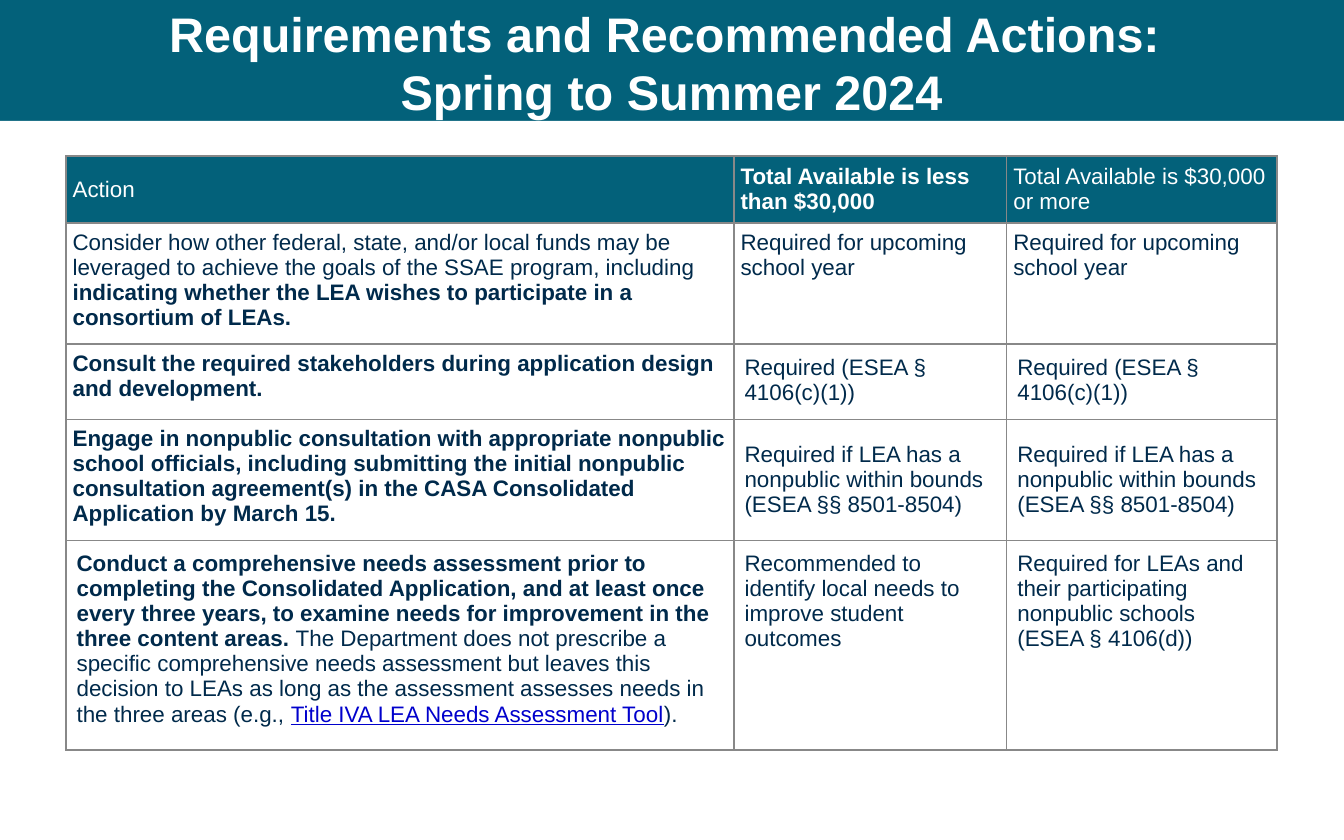
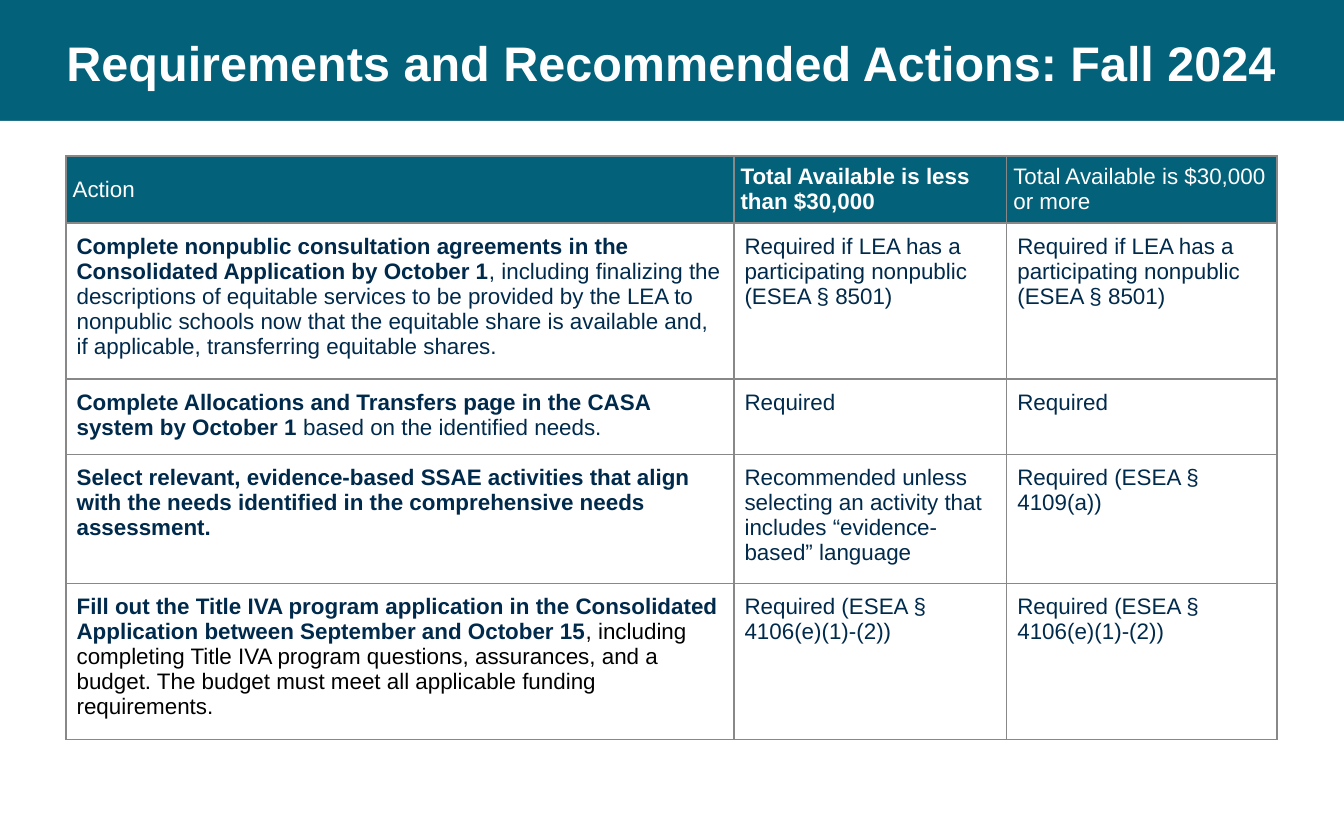
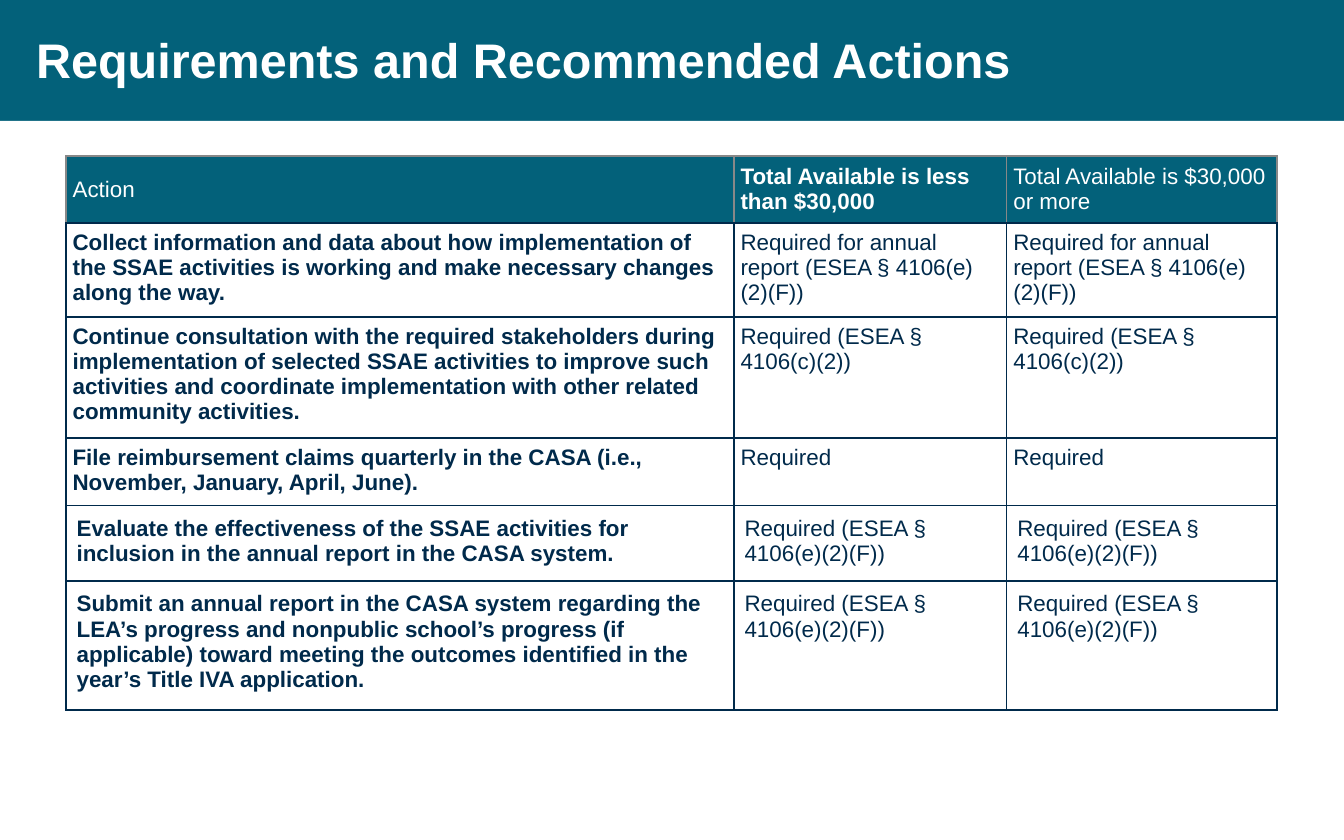
from dataclasses import dataclass

from lxml.etree import SubElement
from pptx import Presentation
from pptx.dml.color import RGBColor
from pptx.enum.shapes import MSO_SHAPE
from pptx.enum.text import MSO_ANCHOR, PP_ALIGN
from pptx.oxml.ns import qn
from pptx.util import Inches, Pt

TEAL = RGBColor(0x03, 0x61, 0x7A)
NAVY = RGBColor(0x00, 0x2A, 0x4B)
GRAY = RGBColor(0x88, 0x88, 0x88)
WHITE = RGBColor(0xFF, 0xFF, 0xFF)
BLACK = RGBColor(0x00, 0x00, 0x00)
LINK_BLUE = RGBColor(0x00, 0x00, 0xCC)

FONT = "Arial"
SLIDE_W, SLIDE_H = 10, 6.25
BAND_H = 0.9
TITLE_BOX = (0.17, 0.12, 9.66, 0.68)
TABLE_LEFT, TABLE_TOP, TABLE_W = 0.49, 1.16, 9.01
COLUMNS = (4.97, 2.03, 2.01)
NARROW, WIDE = 0.05, 0.08


@dataclass
class Text:
    """A stretch of text in one format."""
    text: str
    bold: bool = False
    color: RGBColor = NAVY
    underline: bool = False


@dataclass
class Action:
    """A table row: minimum height, action, status below and above the threshold."""
    min_height: float
    action: list
    below: str
    above: str = ""
    pad: float = WIDE
    action_pad: float = 0
    status_anchor: MSO_ANCHOR = MSO_ANCHOR.TOP


HEADER = [
    Text("Action", color=WHITE),
    Text("Total Available is less than $30,000", True, WHITE),
    Text("Total Available is $30,000 or more", color=WHITE),
]

SPRING_ACTIONS = [
    Action(0.15, [
        Text("Consider how other federal, state, and/or local funds may be leveraged to "
             "achieve the goals of the SSAE program, including "),
        Text("indicating whether the LEA wishes to participate in a consortium of LEAs.", True),
    ], "Required for upcoming school year", pad=NARROW),
    Action(0, [
        Text("Consult the required stakeholders during application design and development.", True),
    ], "Required (ESEA § 4106(c)(1))", action_pad=NARROW),
    Action(0, [
        Text("Engage in nonpublic consultation with appropriate nonpublic school officials, "
             "including submitting the initial nonpublic consultation agreement(s) in the "
             "CASA Consolidated Application by March 15.", True),
    ], "Required if LEA has a nonpublic within bounds (ESEA §§ 8501-8504)",
        action_pad=NARROW, status_anchor=MSO_ANCHOR.MIDDLE),
    Action(0.26, [
        Text("Conduct a comprehensive needs assessment prior to completing the Consolidated "
             "Application, and at least once every three years, to examine needs for "
             "improvement in the three content areas. ", True),
        Text("The Department does not prescribe a specific comprehensive needs assessment but "
             "leaves this decision to LEAs as long as the assessment assesses needs in the "
             "three areas (e.g., "),
        Text("Title IVA LEA Needs Assessment Tool", color=LINK_BLUE, underline=True),
        Text(")."),
    ], "Recommended to identify local needs to improve student outcomes",
        "Required for LEAs and their participating nonpublic schools (ESEA § 4106(d))"),
]

FALL_ACTIONS = [
    Action(1.07, [
        Text("Complete nonpublic consultation agreements in the Consolidated Application by "
             "October 1", True),
        Text(", including finalizing the descriptions of equitable services to be provided by "
             "the LEA to nonpublic schools now that the equitable share is available and, if "
             "applicable, transferring equitable shares."),
    ], "Required if LEA has a participating nonpublic (ESEA § 8501)"),
    Action(0, [
        Text("Complete Allocations and Transfers page in the CASA system by October 1", True),
        Text(" based on the identified needs."),
    ], "Required"),
    Action(0.89, [
        Text("Select relevant, evidence-based SSAE activities that align with the needs "
             "identified in the comprehensive needs assessment.", True),
    ], "Recommended unless selecting an activity that includes “evidence-based” language",
        "Required (ESEA § 4109(a))"),
    Action(0.21, [
        Text("Fill out the Title IVA program application in the Consolidated Application "
             "between September and October 15", True),
        Text(", including completing Title IVA program questions, assurances, and a budget. "
             "The budget must meet all applicable funding requirements.", color=BLACK),
    ], "Required (ESEA § 4106(e)(1)-(2))"),
]

ONGOING_ACTIONS = [
    Action(0.69, [
        Text("Collect information and data about how implementation of the SSAE activities is "
             "working and make necessary changes along the way.", True),
    ], "Required for annual report (ESEA § 4106(e)(2)(F))", pad=NARROW),
    Action(0.89, [
        Text("Continue consultation with the required stakeholders during implementation of "
             "selected SSAE activities to improve such activities and coordinate "
             "implementation with other related community activities.", True),
    ], "Required (ESEA § 4106(c)(2))", pad=NARROW),
    Action(0.49, [
        Text("File reimbursement claims quarterly in the CASA (i.e., November, January, April, "
             "June).", True),
    ], "Required", pad=NARROW),
    Action(0.55, [
        Text("Evaluate the effectiveness of the SSAE activities for inclusion in the annual "
             "report in the CASA system.", True),
    ], "Required (ESEA § 4106(e)(2)(F))"),
    Action(0.95, [
        Text("Submit an annual report in the CASA system regarding the LEA’s progress and "
             "nonpublic school’s progress (if applicable) toward meeting the outcomes "
             "identified in the year’s Title IVA application.", True),
    ], "Required (ESEA § 4106(e)(2)(F))"),
]


def set_margins(target, pad_x, pad_y):
    """Set the inner margins of a text frame or cell."""
    target.margin_left = target.margin_right = Inches(pad_x)
    target.margin_top = target.margin_bottom = Inches(pad_y)


def add_runs(p, texts, size):
    """Append formatted runs to a paragraph."""
    for text in texts:
        r = p.add_run()
        r.text = text.text
        r.font.name = FONT
        r.font.size = Pt(size)
        r.font.bold = text.bold
        r.font.underline = text.underline
        r.font.color.rgb = text.color


def set_borders(cell, color):
    """Draw a one-point line on every side of a cell."""
    tc_pr = cell._tc.get_or_add_tcPr()
    for side in ("a:lnL", "a:lnR", "a:lnT", "a:lnB"):
        ln = SubElement(tc_pr, qn(side), w=str(Pt(1)))
        fill = SubElement(ln, qn("a:solidFill"))
        SubElement(fill, qn("a:srgbClr"), val=str(color))


def fill_cell(cell, texts, pad, border, fill=None, anchor=MSO_ANCHOR.TOP):
    """Fill one table cell with text, borders and background."""
    set_margins(cell, pad, pad)
    cell.vertical_anchor = anchor
    add_runs(cell.text_frame.paragraphs[0], texts, 12)
    set_borders(cell, border)
    if fill is None:
        cell.fill.background()
    else:
        cell.fill.solid()
        cell.fill.fore_color.rgb = fill


def add_panel(slide):
    """Add the white panel under the title band."""
    sp = slide.shapes.add_shape(MSO_SHAPE.RECTANGLE, 0, Inches(BAND_H),
                                Inches(SLIDE_W), Inches(SLIDE_H - BAND_H))
    sp.shadow.inherit = False
    sp.fill.solid()
    sp.fill.fore_color.rgb = WHITE
    sp.line.fill.background()


def add_title(slide, box, title, align, anchor, pad):
    """Add the slide title in the band."""
    tf = slide.shapes.add_textbox(*map(Inches, box)).text_frame
    tf.word_wrap = True
    tf.vertical_anchor = anchor
    set_margins(tf, *pad)
    p = tf.paragraphs[0]
    p.alignment = align
    for i, line in enumerate(title):
        if i:
            p.add_line_break()
        add_runs(p, [Text(line, True, WHITE)], 26)


def add_action_table(slide, box, actions, header_h, border):
    """Add the table of actions and their status."""
    heights = [header_h] + [a.min_height for a in actions]
    frame = slide.shapes.add_table(len(heights), len(COLUMNS), *map(Inches, box))
    table = frame.table
    table.first_row = table.horz_banding = False
    for column, w in zip(table.columns, COLUMNS):
        column.width = Inches(w)
    for row, h in zip(table.rows, heights):
        row.height = Inches(h)
    frame.height = Inches(box[3])
    for c, text in enumerate(HEADER):
        fill_cell(table.cell(0, c), [text], NARROW, GRAY, TEAL, MSO_ANCHOR.MIDDLE)
    for i, a in enumerate(actions, 1):
        fill_cell(table.cell(i, 0), a.action, a.action_pad or a.pad, border)
        for c, status in enumerate((a.below, a.above or a.below), 1):
            fill_cell(table.cell(i, c), [Text(status)], a.pad, border, anchor=a.status_anchor)


def add_action_slide(prs, title, actions, table_h, header_h, align=PP_ALIGN.CENTER,
                     anchor=MSO_ANCHOR.MIDDLE, pad=(0.1, 0.1), border=GRAY):
    """Add one slide with a title band and an action table."""
    slide = prs.slides.add_slide(prs.slide_layouts[6])
    add_panel(slide)
    add_title(slide, TITLE_BOX, title, align, anchor, pad)
    add_action_table(slide, (TABLE_LEFT, TABLE_TOP, TABLE_W, table_h), actions, header_h, border)


def main():
    """Build the presentation."""
    prs = Presentation()
    prs.slide_width, prs.slide_height = Inches(SLIDE_W), Inches(SLIDE_H)
    background = prs.slide_master.background.fill
    background.solid()
    background.fore_color.rgb = TEAL
    heading = "Requirements and Recommended Actions"
    add_action_slide(prs, [f"{heading}: ", "Spring to Summer 2024"], SPRING_ACTIONS,
                     4.42, 0.17, pad=(0.07, 0.04))
    add_action_slide(prs, [f"{heading}: Fall 2024"], FALL_ACTIONS, 4.34, 0.46)
    add_action_slide(prs, [heading], ONGOING_ACTIONS, 4.12, 0.49,
                     PP_ALIGN.LEFT, MSO_ANCHOR.TOP, border=NAVY)
    prs.save("out.pptx")


if __name__ == "__main__":
    main()
